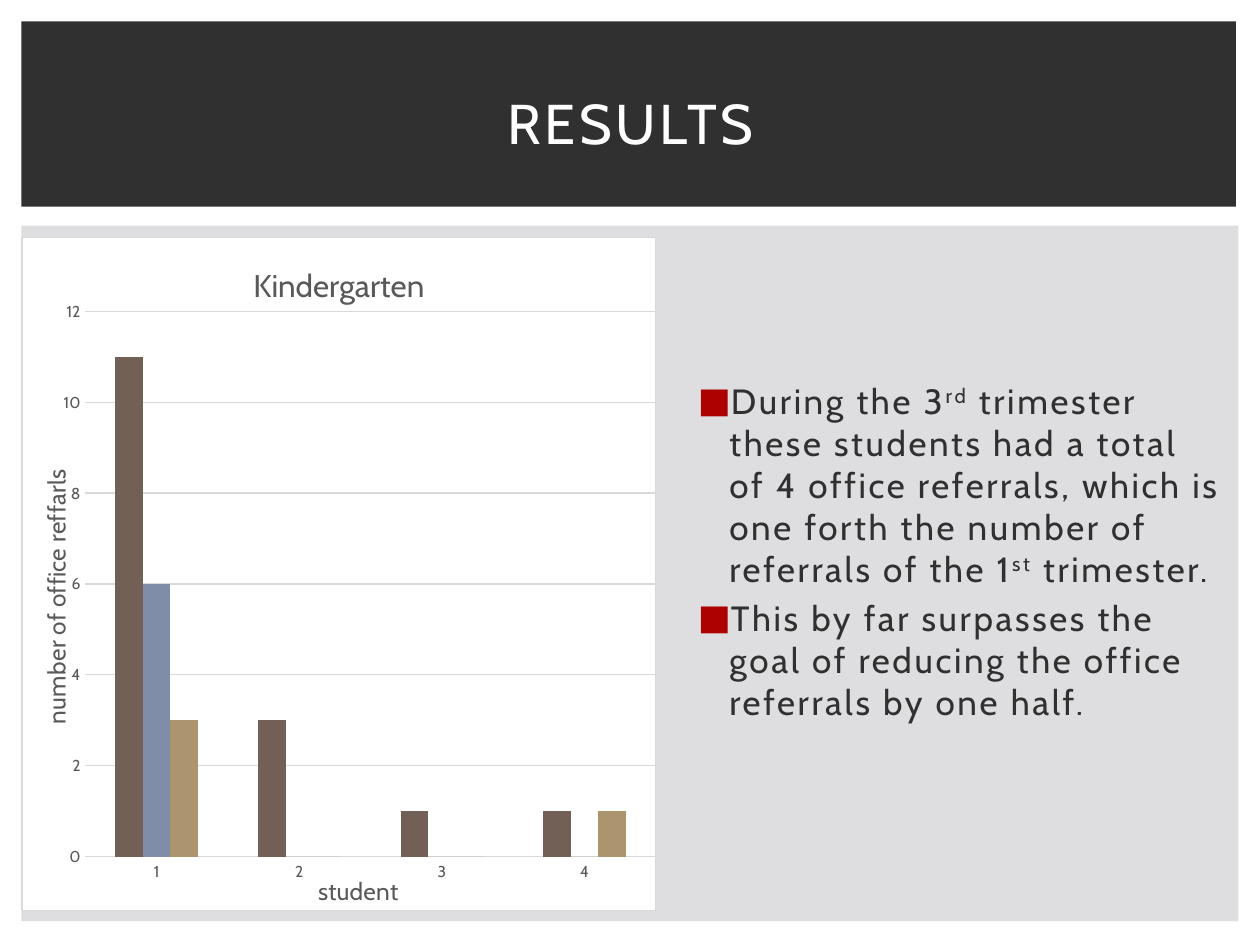
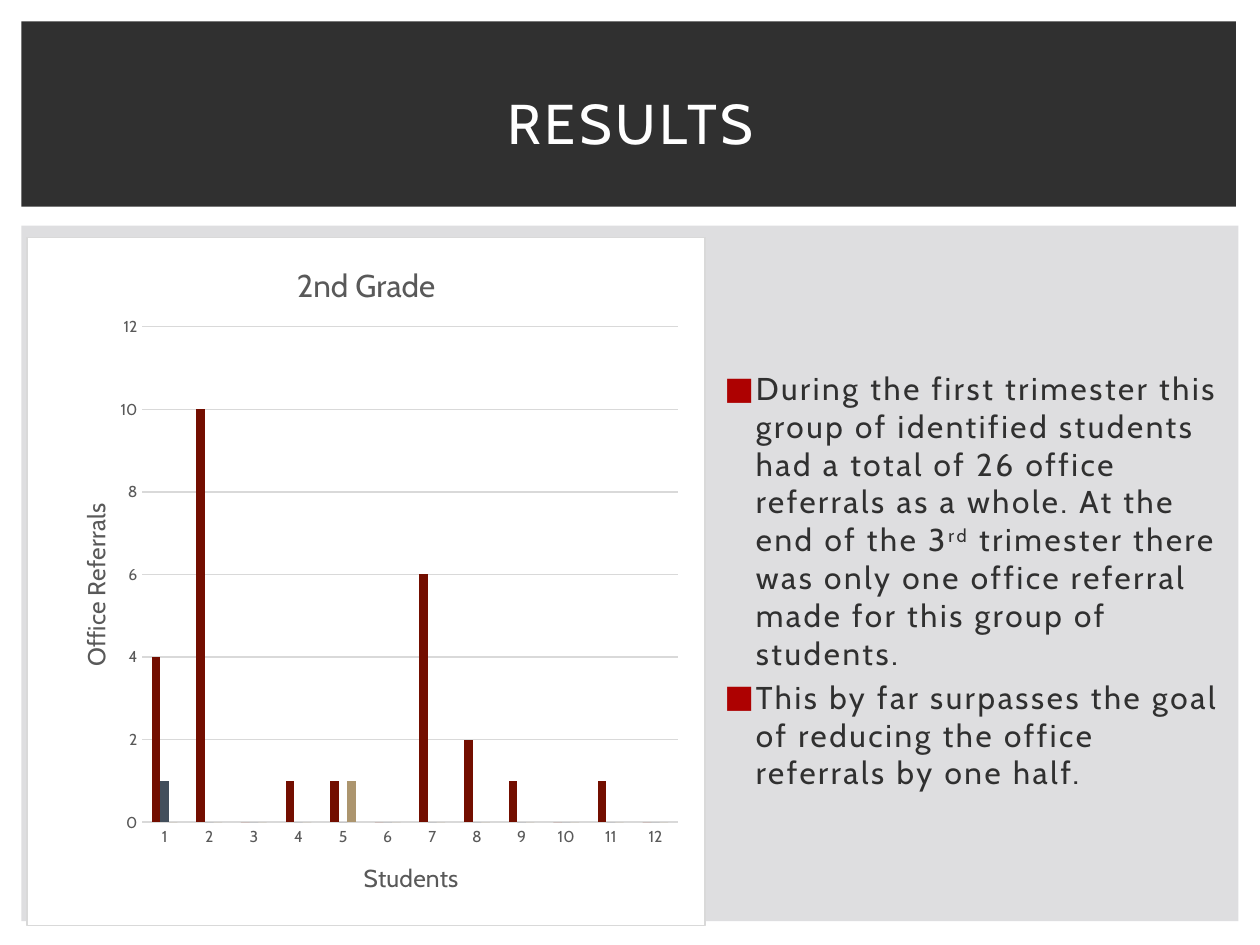
from dataclasses import dataclass

from lxml.etree import SubElement
from pptx import Presentation
from pptx.chart.data import CategoryChartData
from pptx.dml.color import RGBColor
from pptx.enum.chart import XL_CHART_TYPE, XL_TICK_MARK
from pptx.enum.shapes import MSO_SHAPE
from pptx.enum.text import MSO_ANCHOR, PP_ALIGN
from pptx.oxml import parse_xml
from pptx.oxml.ns import nsdecls, qn
from pptx.util import Inches, Pt

WHITE = RGBColor(0xFF, 0xFF, 0xFF)
CHARCOAL = RGBColor(0x30, 0x30, 0x30)
PANEL_GREY = RGBColor(0xDE, 0xDE, 0xE0)
RULE_GREY = RGBColor(0xD9, 0xD9, 0xD9)
LABEL_GREY = RGBColor(0x59, 0x59, 0x59)
BULLET_RED = RGBColor(0xAD, 0x01, 0x01)
BROWN = RGBColor(0x72, 0x60, 0x56)
BLUE = RGBColor(0x80, 0x8D, 0xA9)
TAN = RGBColor(0xAC, 0x95, 0x6E)
DARK_RED = RGBColor(0x73, 0x0E, 0x00)
SLATE = RGBColor(0x42, 0x4E, 0x5B)

FONT = "Cabin"
SLIDE_WIDTH, SLIDE_HEIGHT = Inches(10), Inches(7.5)
COLUMN, ROW = SLIDE_WIDTH / 100, SLIDE_HEIGHT / 75


@dataclass
class Box:
    """An area in columns and rows of the slide grid."""
    left: float
    top: float
    width: float
    height: float

    def emu(self):
        """Return left, top, width and height as slide lengths."""
        return (int(self.left * COLUMN), int(self.top * ROW),
                int(self.width * COLUMN), int(self.height * ROW))


PANEL = Box(1.7, 17.9, 96.6, 55.2)
BAND = Box(1.7, 1.7, 96.4, 14.7)
TITLE = Box(4.2, 3.9, 91.7, 11.5)

GOAL = ("This by far surpasses the goal of reducing the office "
        "referrals by one half.")

RESULTS = [
    dict(
        chart_box=Box(1.7, 18.8, 50.4, 53.8),
        grade="Kindergarten",
        trimesters=[(BROWN, (11, 3, 1, 1)), (BLUE, (6, 0, 0, 0)),
                    (TAN, (3, 0, 0, 1))],
        plot_share=(0.1, 0.11, 0.9, 0.81),
        student_title=("student", (0.46, 0.94)),
        referral_title=("number of office reffarls", (0.02, 0.34)),
        text_box=Box(53.9, 29.6, 44.2, 32.3),
        text_size=20,
        findings=[
            "During the 3|rd| trimester these students had a total of 4 "
            "office referrals, which is one forth the number of referrals "
            "of the 1|st| trimester.", GOAL],
    ),
    dict(
        chart_box=Box(2.1, 18.8, 53.9, 54.7),
        grade="2nd Grade",
        trimesters=[(DARK_RED, (4, 10, 0, 1, 1, 0, 6, 2, 1, 0, 1, 0)),
                    (SLATE, (1,) + (0,) * 11),
                    (TAN, (0,) * 4 + (1,) + (0,) * 7)],
        plot_share=(0.17, 0.13, 0.79, 0.72),
        student_title=("Students", (0.49, 0.9)),
        referral_title=("Office Referrals", (0.07, 0.38)),
        text_box=Box(56, 28.8, 41.9, 34.8),
        text_size=18,
        findings=[
            "During the first trimester this group of identified students "
            "had a total of 26 office referrals as a whole. At the end of "
            "the 3|rd| trimester there was only one office referral made "
            "for this group of students.", GOAL],
    ),
]


def style(font, color, **values):
    """Give a font its colour, the shared typeface and further values."""
    for name, value in dict(name=FONT, bold=False, **values).items():
        setattr(font, name, value)
    font.color.rgb = color


def add_block(slide, box, color):
    """Draw a plain filled rectangle over the box."""
    block = slide.shapes.add_shape(MSO_SHAPE.RECTANGLE, *box.emu())
    block.shadow.inherit = False
    block.fill.solid()
    block.fill.fore_color.rgb = color
    block.line.fill.background()


def add_heading(slide, box, text):
    """Place the slide title in front of the band."""
    heading = slide.shapes.title
    for name, value in zip(("left", "top", "width", "height"), box.emu()):
        setattr(heading, name, value)
    frame = heading.text_frame
    frame.text = text
    frame.vertical_anchor = MSO_ANCHOR.MIDDLE
    paragraph = frame.paragraphs[0]
    paragraph.alignment = PP_ALIGN.CENTER
    run = paragraph.runs[0]
    style(run.font, WHITE, size=Pt(32))
    run.font._element.set("spc", "200")
    slide.shapes._spTree.append(heading._element)


def set_layout(parent, **shares):
    """Fix a chart part at shares of the chart's size."""
    old = parent.find(qn("c:layout"))
    if old is not None:
        parent.remove(old)
    layout = parse_xml(f"<c:layout {nsdecls('c')}/>")
    manual = SubElement(layout, qn("c:manualLayout"))
    if "w" in shares:
        SubElement(manual, qn("c:layoutTarget")).set("val", "inner")
    for mode in ("xMode", "yMode"):
        SubElement(manual, qn(f"c:{mode}")).set("val", "edge")
    for side, share in shares.items():
        SubElement(manual, qn(f"c:{side}")).set("val", str(share))
    wording = parent.find(qn("c:tx"))
    parent.insert(0 if wording is None else 1, layout)


def write_chart_title(title, text, size):
    """Write a chart or axis title in the label colour."""
    title.text_frame.text = text
    style(title.text_frame.paragraphs[0].runs[0].font, LABEL_GREY,
          size=Pt(size))


def format_axis(axis, title, corner, turn):
    """Format one axis with its title at the given corner."""
    axis.major_tick_mark = axis.minor_tick_mark = XL_TICK_MARK.NONE
    style(axis.tick_labels.font, LABEL_GREY, size=Pt(9))
    write_chart_title(axis.axis_title, title, 14)
    body = axis.axis_title.text_frame._txBody.bodyPr
    body.set("rot", str(turn * 60000))
    body.set("vert", "horz")
    set_layout(axis.axis_title._element, x=corner[0], y=corner[1])


def rule(line):
    """Make a line thin and light grey."""
    line.color.rgb = RULE_GREY
    line.width = Pt(0.75)


def add_referral_chart(slide, box, grade, trimesters, plot_share,
                       student_title, referral_title):
    """Chart the office referrals of each student by trimester."""
    data = CategoryChartData()
    data.categories = [str(n + 1) for n in range(len(trimesters[0][1]))]
    for number, (_, referrals) in enumerate(trimesters, 1):
        data.add_series(f"Series {number}", referrals)
    chart = slide.shapes.add_chart(
        XL_CHART_TYPE.COLUMN_CLUSTERED, *box.emu(), data).chart
    style(chart.font, LABEL_GREY, size=Pt(10))
    chart.has_legend = False
    chart.has_title = True
    write_chart_title(chart.chart_title, grade, 18)
    chart.chart_title.include_in_layout = False

    students, referrals = chart.category_axis, chart.value_axis
    format_axis(students, *student_title, 0)
    format_axis(referrals, *referral_title, -90)
    rule(students.format.line)
    referrals.format.line.fill.background()
    rule(referrals.major_gridlines.format.line)
    for name, value in dict(minimum_scale=0, maximum_scale=12,
                            major_unit=2).items():
        setattr(referrals, name, value)

    plot = chart.plots[0]
    for name, value in dict(gap_width=219, overlap=0,
                            vary_by_categories=False).items():
        setattr(plot, name, value)
    for series, (color, _) in zip(plot.series, trimesters):
        series.format.fill.solid()
        series.format.fill.fore_color.rgb = color

    chart_part = chart._chartSpace.find(qn("c:chart"))
    set_layout(chart_part.find(qn("c:plotArea")),
               **dict(zip("xywh", plot_share)))
    chart_part.addnext(parse_xml(
        f"<c:spPr {nsdecls('c', 'a')}><a:solidFill><a:srgbClr val='{WHITE}'/>"
        f"</a:solidFill><a:ln w='{Pt(0.75)}'><a:solidFill>"
        f"<a:srgbClr val='{RULE_GREY}'/></a:solidFill></a:ln></c:spPr>"))


def add_bullet(paragraph):
    """Give a paragraph a hanging red square."""
    properties = paragraph._p.get_or_add_pPr()
    properties.set("marL", str(Inches(0.3)))
    properties.set("indent", str(Inches(-0.25)))
    color = SubElement(properties, qn("a:buClr"))
    SubElement(color, qn("a:srgbClr")).set("val", str(BULLET_RED))
    SubElement(properties, qn("a:buFont")).set("typeface", FONT)
    SubElement(properties, qn("a:buChar")).set("char", "■")


def add_findings(slide, box, findings, size):
    """Write the bulleted findings, raising the parts between bars."""
    frame = slide.shapes.add_textbox(*box.emu()).text_frame
    frame.word_wrap = True
    for index, finding in enumerate(findings):
        paragraph = frame.add_paragraph() if index else frame.paragraphs[0]
        paragraph.space_before = Pt(size * 0.2)
        add_bullet(paragraph)
        for position, text in enumerate(finding.split("|")):
            run = paragraph.add_run()
            run.text = text
            style(run.font, CHARCOAL, size=Pt(size))
            run.font._element.set("spc", "150")
            if position % 2:
                run.font._element.set("baseline", "30000")


def add_results_slide(deck, chart_box, text_box, text_size, findings,
                      **chart_values):
    """Build one results slide: band, title, chart and findings."""
    slide = deck.slides.add_slide(deck.slide_layouts[5])
    add_block(slide, PANEL, PANEL_GREY)
    add_block(slide, BAND, CHARCOAL)
    add_referral_chart(slide, chart_box, **chart_values)
    add_findings(slide, text_box, findings, text_size)
    add_heading(slide, TITLE, "RESULTS")


def main():
    """Build and save the deck."""
    deck = Presentation()
    deck.slide_width, deck.slide_height = SLIDE_WIDTH, SLIDE_HEIGHT
    for result in RESULTS:
        add_results_slide(deck, **result)
    deck.save("out.pptx")


if __name__ == "__main__":
    main()
